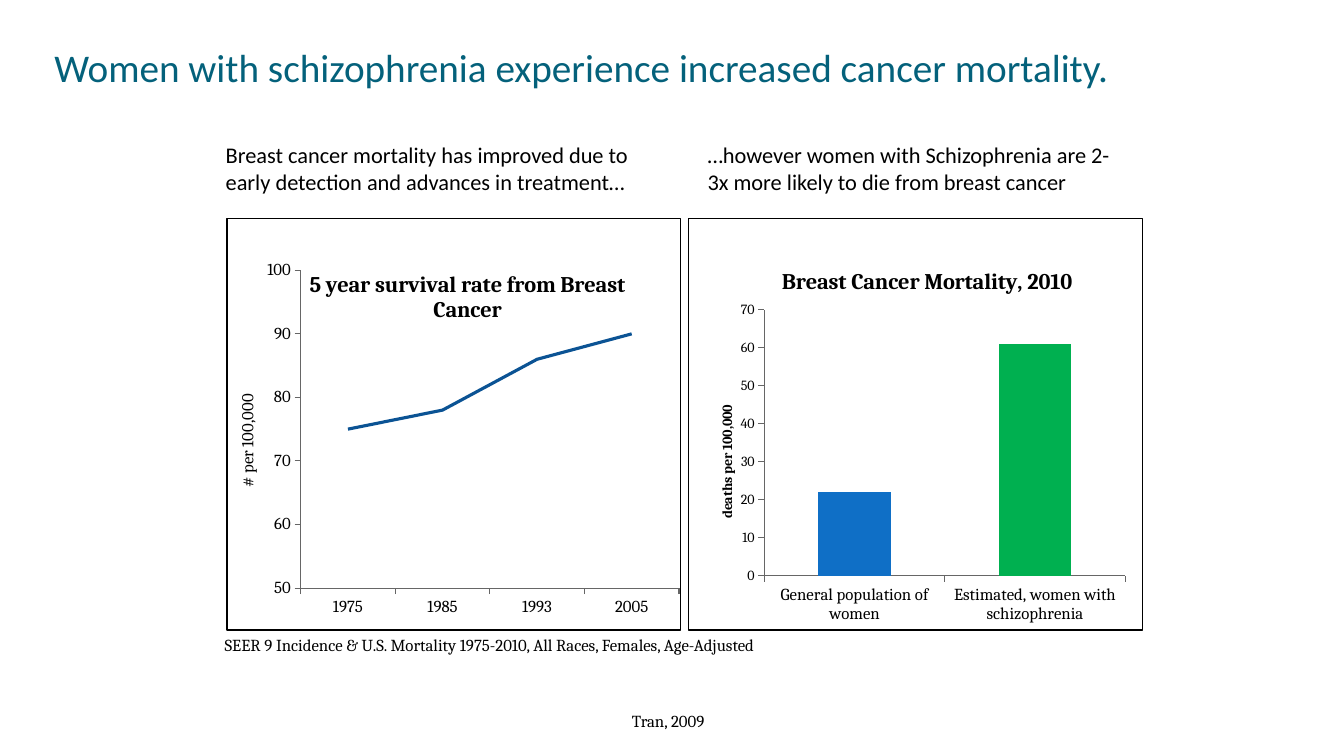
"""Build the slide on breast cancer survival and schizophrenia mortality."""
import pptx
import pptx.util
import pptx.chart.data
import pptx.dml.color
import pptx.enum.chart
import pptx.enum.shapes
import pptx.enum.text
import pptx.oxml
import pptx.oxml.ns

Inches = pptx.util.Inches
Pt = pptx.util.Pt
COLORS = {"title": "04617B", "text": "000000", "axis": "666666",
          "survival": "0B5394", "general": "0F6FC6", "schizophrenia": "00B050"}


def style_text(font, name, size, color, bold=False):
    font.name = name
    font.size = Pt(size)
    font.bold = bold
    font.color.rgb = pptx.dml.color.RGBColor.from_string(COLORS[color])


def place(element, tag, left, top, size=None):
    for old in element.findall(pptx.oxml.ns.qn("c:layout")):
        element.remove(old)
    values = {"xMode": "edge", "yMode": "edge", "x": left, "y": top}
    if size:
        values = {"layoutTarget": "inner", **values, "w": size[0], "h": size[1]}
    entries = "".join(f'<c:{key} val="{value}"/>' for key, value in values.items())
    layout = pptx.oxml.parse_xml(
        f'<c:layout {pptx.oxml.ns.nsdecls("c")}><c:manualLayout>{entries}'
        "</c:manualLayout></c:layout>")
    before = element.find(pptx.oxml.ns.qn(tag)) if tag else None
    if before is None:
        element.insert(0, layout)
    else:
        before.addnext(layout)


deck = pptx.Presentation()
deck.slide_width = Inches(13.33)
deck.slide_height = Inches(7.5)
page = deck.slides.add_slide(deck.slide_layouts[5])

title = page.shapes.title
title.left, title.top = Inches(0.54), Inches(-0.39)
title.width, title.height = Inches(10.71), Inches(1.29)
frame = title.text_frame
frame.margin_left = frame.margin_right = frame.margin_bottom = 0
frame.margin_top = Inches(0.05)
frame.vertical_anchor = pptx.enum.text.MSO_ANCHOR.BOTTOM
para = frame.paragraphs[0]
para.alignment = pptx.enum.text.PP_ALIGN.LEFT
span = para.add_run()
span.text = "Women with schizophrenia experience increased cancer mortality."
style_text(span.font, "Calibri", 28, "title")

chart_types = pptx.enum.chart.XL_CHART_TYPE
charts = [
    dict(kind=chart_types.COLUMN_CLUSTERED, at=(6.83, 2.42, 4.42, 3.83),
         title="Breast Cancer Mortality, 2010", title_at=(0.2, 0.05),
         axis_title="deaths per 100,000", axis_title_at=(0.06, 0.41),
         axis_size=10, axis_bold=True, scale=(0, 70),
         plot=(0.17, 0.17, (0.81, 0.69)),
         data={"General population of women": 22,
               "Estimated, women with schizophrenia": 61}),
    dict(kind=chart_types.LINE, at=(2.08, 1.75, 4.75, 4.44),
         title="5 year survival rate from Breast Cancer", title_at=(0.2, 0.2),
         axis_title="# per 100,000", axis_title_at=(0.05, 0.48),
         axis_size=12, axis_bold=False, scale=(50, 100),
         plot=(0.19, 0.21, (0.79, 0.71)),
         data={"1975": 75, "1985": 78, "1993": 86, "2005": 90}),
]
for item in charts:
    data = pptx.chart.data.CategoryChartData()
    data.categories = list(item["data"])
    data.add_series("Series 1", list(item["data"].values()))
    chart = page.shapes.add_chart(item["kind"], *map(Inches, item["at"]), data).chart
    chart.has_legend = False
    style_text(chart.font, "Cambria", item["axis_size"], "text")

    chart.has_title = True
    span = chart.chart_title.text_frame.paragraphs[0].add_run()
    span.text = item["title"]
    style_text(span.font, "Cambria", 16, "text", True)
    chart.chart_title.include_in_layout = True
    place(chart.chart_title._element, "c:tx", *item["title_at"])

    values, categories = chart.value_axis, chart.category_axis
    values.minimum_scale, values.maximum_scale = item["scale"]
    values.major_unit = 10
    for axis, size in ((values, item["axis_size"]), (categories, 12)):
        axis.has_major_gridlines = False
        axis.major_tick_mark = pptx.enum.chart.XL_TICK_MARK.OUTSIDE
        axis.minor_tick_mark = pptx.enum.chart.XL_TICK_MARK.NONE
        axis.format.line.color.rgb = pptx.dml.color.RGBColor.from_string(COLORS["axis"])
        axis.format.line.width = Pt(0.75)
        style_text(axis.tick_labels.font, "Cambria", size, "text")
    values.has_title = True
    span = values.axis_title.text_frame.paragraphs[0].add_run()
    span.text = item["axis_title"]
    style_text(span.font, "Cambria", item["axis_size"], "text", item["axis_bold"])
    place(values.axis_title._element, "c:tx", *item["axis_title_at"])
    place(chart._chartSpace.chart.plotArea, None, *item["plot"])

    plot = chart.plots[0]
    plot.vary_by_categories = False
    series = plot.series[0]
    if item["kind"] == chart_types.LINE:
        series.smooth = False
        series.marker.style = pptx.enum.chart.XL_MARKER_STYLE.NONE
        series.format.line.width = Pt(2.25)
        series.format.line.color.rgb = pptx.dml.color.RGBColor.from_string(COLORS["survival"])
    else:
        plot.gap_width = 150
        for index, color in enumerate(("general", "schizophrenia")):
            fill = series.points[index].format.fill
            fill.solid()
            fill.fore_color.rgb = pptx.dml.color.RGBColor.from_string(COLORS[color])

for left in (2.25, 6.83):
    border = page.shapes.add_shape(pptx.enum.shapes.MSO_SHAPE.RECTANGLE, Inches(left),
                                   Inches(2.17), Inches(4.5), Inches(4.08))
    border.shadow.inherit = False
    border.fill.background()
    border.line.color.rgb = pptx.dml.color.RGBColor.from_string(COLORS["text"])
    border.line.width = Pt(1)

texts = [
    ((2.14, 1.35, 4.67, 0.73), "Calibri", 16,
     "Breast cancer mortality has improved due to early detection and advances in treatment…"),
    ((6.92, 1.35, 4.33, 0.73), "Calibri", 16,
     "…however women with Schizophrenia are 2-3x more likely to die from breast cancer"),
    ((2.13, 6.25, 6.33, 0.3), "Cambria", 12,
     "SEER 9 Incidence & U.S. Mortality 1975-2010, All Races, Females, Age-Adjusted"),
    ((6.17, 7, 1.33, 0.3), "Cambria", 12, "Tran, 2009"),
]
for position, font_name, size, wording in texts:
    box = page.shapes.add_textbox(*map(Inches, position))
    box.text_frame.word_wrap = True
    span = box.text_frame.paragraphs[0].add_run()
    span.text = wording
    style_text(span.font, font_name, size, "text")

deck.save("out.pptx")
